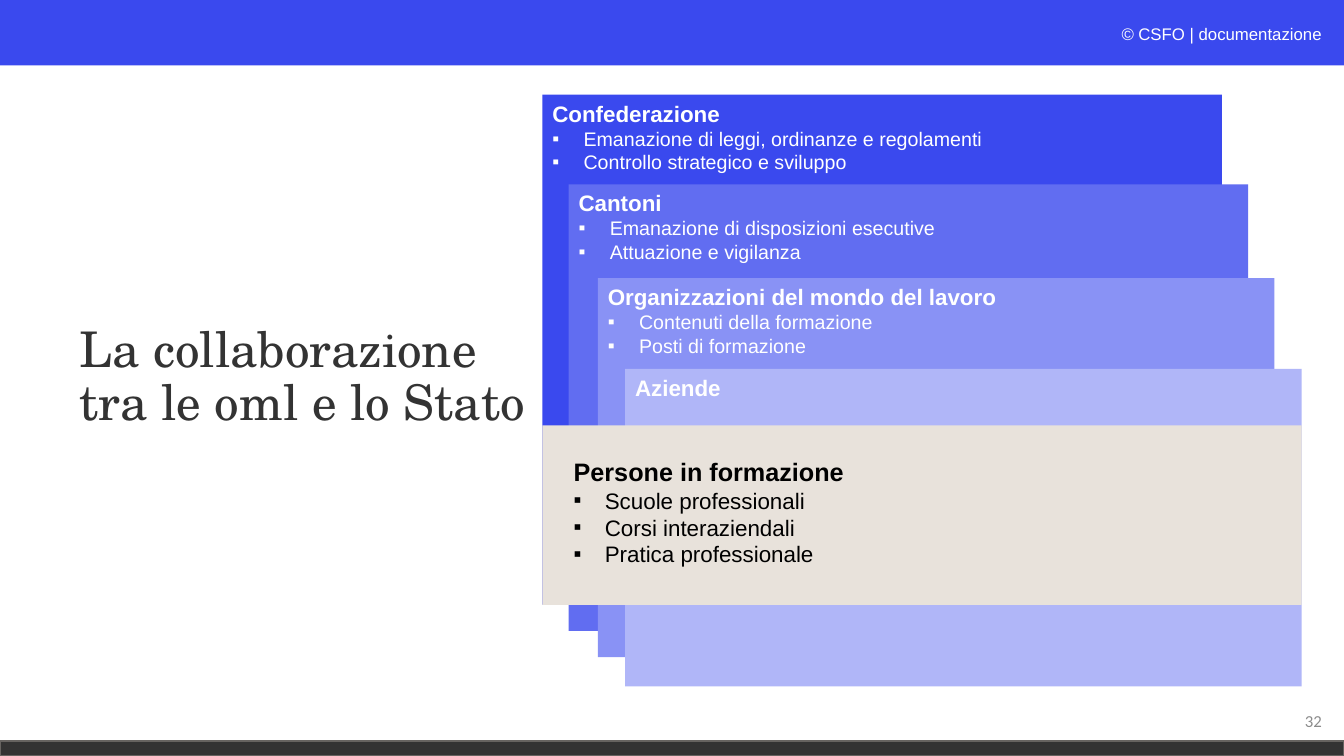
"""Builds the slide on how the State and labour-market organisations collaborate."""
from dataclasses import dataclass

from lxml.etree import SubElement
from pptx import Presentation
from pptx.dml.color import RGBColor
from pptx.enum.shapes import MSO_SHAPE
from pptx.enum.text import MSO_ANCHOR, MSO_AUTO_SIZE, PP_ALIGN
from pptx.oxml.ns import qn
from pptx.util import Emu, Pt

PX = 9144
SLIDE_W, SLIDE_H = 1333, 750
BULLET_INDENT = 31

BLUE = RGBColor(0x3A, 0x49, 0xEE)
BLUE_2 = RGBColor(0x61, 0x6D, 0xF1)
BLUE_3 = RGBColor(0x89, 0x92, 0xF5)
BLUE_4 = RGBColor(0xB0, 0xB6, 0xF8)
SAND = RGBColor(0xE8, 0xE2, 0xDB)
DARK = RGBColor(0x33, 0x33, 0x33)
DARK_EDGE = RGBColor(0x66, 0x63, 0x60)
GREY = RGBColor(0x8C, 0x8C, 0x8C)
OFF_WHITE = RGBColor(0xFC, 0xFD, 0xFE)
WHITE = RGBColor(0xFF, 0xFF, 0xFF)
BLACK = RGBColor(0x00, 0x00, 0x00)


@dataclass(frozen=True)
class Box:
    left: int
    top: int
    width: int
    height: int

    def emu(self) -> tuple[Emu, ...]:
        return tuple(Emu(v * PX) for v in (self.left, self.top, self.width, self.height))


@dataclass(frozen=True)
class Panel:
    box: Box
    fill: RGBColor
    heading: str
    items: tuple[str, ...] = ()
    color: RGBColor = WHITE
    heading_pt: int = 16
    inset_left: int = 10
    inset_top: int = 5


PANELS = (
    Panel(Box(538, 94, 674, 506), BLUE, "Confederazione",
          ("Emanazione di leggi, ordinanze e regolamenti", "Controllo strategico e sviluppo")),
    Panel(Box(564, 183, 674, 443), BLUE_2, "Cantoni",
          ("Emanazione di disposizioni esecutive", "Attuazione e vigilanza")),
    Panel(Box(593, 276, 671, 376), BLUE_3, "Organizzazioni del mondo del lavoro",
          ("Contenuti della formazione", "Posti di formazione")),
    Panel(Box(620, 366, 671, 315), BLUE_4, "Aziende"),
    Panel(Box(538, 422, 753, 178), SAND, "Persone in formazione",
          ("Scuole professionali", "Corsi interaziendali", "Pratica professionale"),
          BLACK, 18, 31, 31),
)


def add_run(p, text: str, size: float, color: RGBColor, font: str = "Arial",
            bold: bool = False, italic: bool = False) -> None:
    r = p.add_run()
    r.text = text
    r.font.name = font
    r.font.size = Pt(size)
    r.font.color.rgb = color
    r.font.bold = bold
    r.font.italic = italic


def add_rect(s, box: Box, fill: RGBColor, line: RGBColor | None = None):
    sp = s.shapes.add_shape(MSO_SHAPE.RECTANGLE, *box.emu())
    sp.shadow.inherit = False
    sp.fill.solid()
    sp.fill.fore_color.rgb = fill
    if line is None:
        sp.line.fill.background()
    else:
        sp.line.color.rgb = line
        sp.line.width = Pt(1)
    return sp


def add_right_text(s, box: Box, anchor: MSO_ANCHOR):
    tf = s.shapes.add_textbox(*box.emu()).text_frame
    tf.word_wrap = True
    tf.vertical_anchor = anchor
    p = tf.paragraphs[0]
    p.alignment = PP_ALIGN.RIGHT
    return p


def set_bullet(p) -> None:
    pPr = p._p.get_or_add_pPr()
    pPr.set("marL", str(BULLET_INDENT * PX))
    pPr.set("indent", str(-BULLET_INDENT * PX))
    SubElement(pPr, qn("a:buFont"), typeface="Arial")
    SubElement(pPr, qn("a:buChar"), char="▪")


def add_panel(s, panel: Panel) -> None:
    tf = add_rect(s, panel.box, panel.fill).text_frame
    tf.word_wrap = True
    tf.vertical_anchor = MSO_ANCHOR.TOP
    tf.margin_left = Emu(panel.inset_left * PX)
    tf.margin_top = Emu(panel.inset_top * PX)
    p = tf.paragraphs[0]
    p.alignment = PP_ALIGN.LEFT
    add_run(p, panel.heading, panel.heading_pt, panel.color, bold=True)
    for item in panel.items:
        p = tf.add_paragraph()
        p.alignment = PP_ALIGN.LEFT
        set_bullet(p)
        add_run(p, item, panel.heading_pt - 2, panel.color)


def set_title(s, box: Box, text: str) -> None:
    sp = s.shapes.title
    sp.left, sp.top, sp.width, sp.height = box.emu()
    tf = sp.text_frame
    tf.word_wrap = True
    tf.auto_size = MSO_AUTO_SIZE.NONE
    tf.vertical_anchor = MSO_ANCHOR.MIDDLE
    p = tf.paragraphs[0]
    p.alignment = PP_ALIGN.LEFT
    p.line_spacing = 0.9
    add_run(p, text, 35.1, DARK, "TeX Gyre Schola")


def main() -> None:
    prs = Presentation()
    prs.slide_width, prs.slide_height = Emu(SLIDE_W * PX), Emu(SLIDE_H * PX)
    s = prs.slides.add_slide(prs.slide_layouts.get_by_name("Title Only"))

    add_rect(s, Box(0, 0, SLIDE_W, 65), BLUE)
    add_rect(s, Box(0, 735, SLIDE_W, 15), DARK, DARK_EDGE)
    p = add_right_text(s, Box(862, 19, 459, 30), MSO_ANCHOR.TOP)
    add_run(p, "© ", 12, OFF_WHITE, italic=True)
    add_run(p, "CSFO | documentazione", 12, WHITE)

    set_title(s, Box(69, 276, 469, 199), "La collaborazione tra le oml e lo Stato")
    p = add_right_text(s, Box(1021, 695, 300, 40), MSO_ANCHOR.MIDDLE)
    add_run(p, "32", 12, GREY, "Calibri")

    for panel in PANELS:
        add_panel(s, panel)
    prs.save("out.pptx")


if __name__ == "__main__":
    main()
